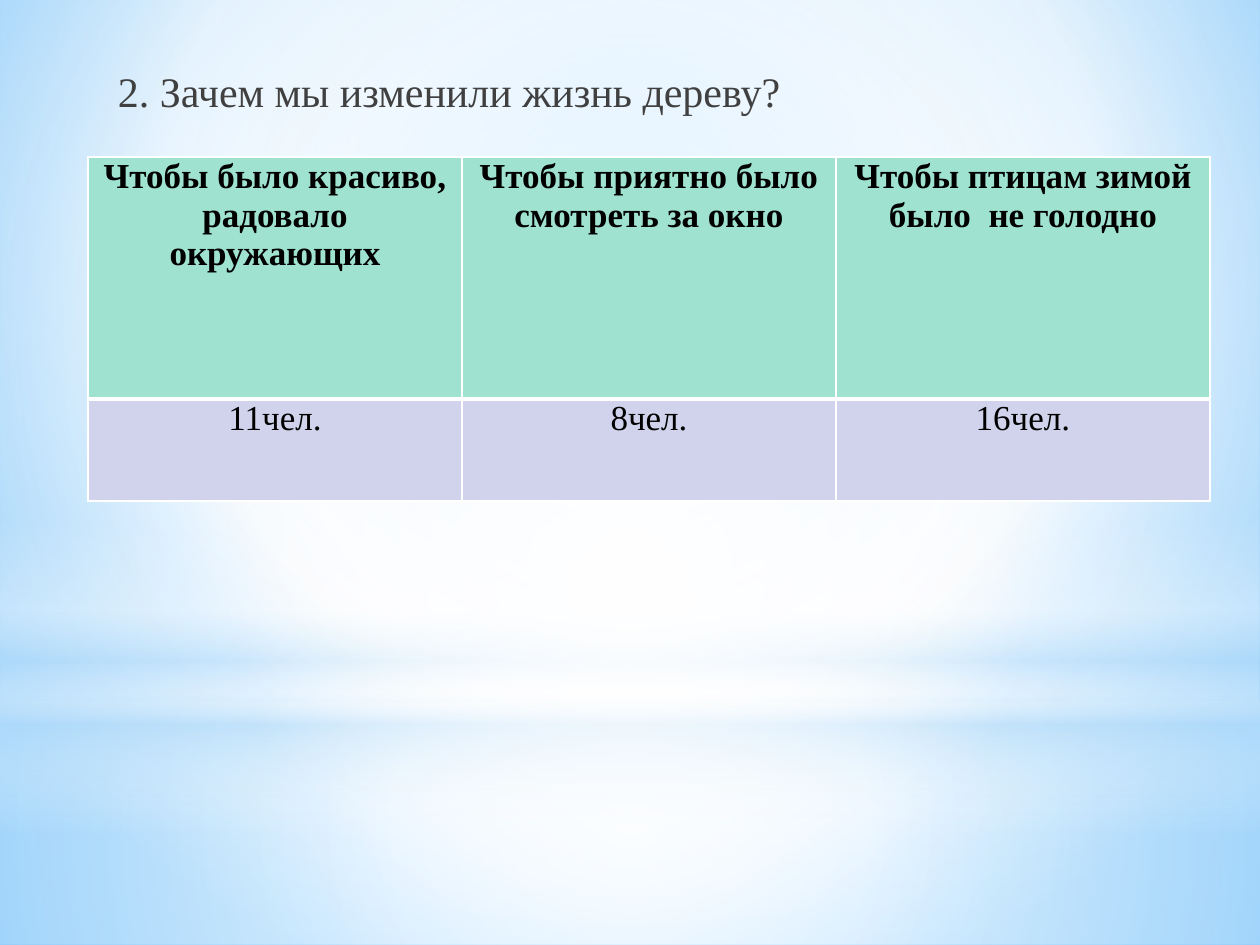
import pptx
import pptx.util
import pptx.dml.color
import pptx.enum.shapes
import pptx.enum.text
import pptx.oxml
import pptx.oxml.ns

PX = 914400 // 126
FONT = "Times New Roman"
COLORS = {
    "white": "FFFFFF",
    "haze": "B4DCFA",
    "sky": "9ED5FF",
    "deep_sky": "5BB9FF",
    "mint": "9EE2CF",
    "lavender": "D0D3EB",
    "black": "000000",
    "gray": "404040",
}
ANSWERS = [
    ["Чтобы было красиво, радовало окружающих",
     "Чтобы приятно было смотреть за окно",
     "Чтобы птицам зимой было  не голодно"],
    ["11чел.", "8чел.", "16чел."],
]
ROW_HEIGHTS = [242, 102]
COL_WIDTH = 374


def px(*lengths):
    return [pptx.util.Emu(n * PX) for n in lengths]


def rgb(name):
    return pptx.dml.color.RGBColor.from_string(COLORS[name])


def set_gradient(parent, stops, center=None):
    gs = "".join(
        f'<a:gs pos="{pos * 1000}"><a:srgbClr val="{COLORS[color]}">'
        f'<a:alpha val="{alpha * 1000}"/></a:srgbClr></a:gs>'
        for pos, color, alpha in stops)
    if center:
        sides = " ".join(f'{k}="{v * 1000}"' for k, v in zip("ltrb", center))
        shade = f'<a:path path="circle"><a:fillToRect {sides}/></a:path>'
    else:
        shade = '<a:lin ang="5400000" scaled="0"/>'
    grad = pptx.oxml.parse_xml(
        f'<a:gradFill {pptx.oxml.ns.nsdecls("a")} rotWithShape="1">'
        f'<a:gsLst>{gs}</a:gsLst>{shade}</a:gradFill>')
    solid = parent.find(pptx.oxml.ns.qn("a:solidFill"))
    parent.replace(solid, grad)


def set_background(slide):
    slide.background.fill.solid()
    bg = slide.element.find(".//" + pptx.oxml.ns.qn("p:bgPr"))
    set_gradient(bg, [(0, "sky", 100), (60, "white", 100), (100, "deep_sky", 100)],
                 (20, 10, 20, 60))


def add_glow(slide, kind, top, height, stops, center=None):
    sp = slide.shapes.add_shape(kind, *px(0, top, 1260, height))
    sp.shadow.inherit = False
    sp.line.fill.background()
    sp.fill.solid()
    set_gradient(sp.element.spPr, stops, center)


def format_run(r, size, color, bold=False):
    r.font.name = FONT
    r.font.size = pptx.util.Pt(size)
    r.font.bold = bold
    r.font.color.rgb = rgb(color)


def add_question(slide, text):
    sp = slide.shapes.add_textbox(*px(63, 59, 911, 79))
    tf = sp.text_frame
    tf.word_wrap = True
    tf.margin_left = px(55)[0]
    tf.text = text
    p = tf.paragraphs[0]
    p.space_before = pptx.util.Pt(4.8)
    p.space_after = pptx.util.Pt(3)
    format_run(p.runs[0], 24, "gray")


def set_borders(cell, widths):
    tc_pr = cell._tc.get_or_add_tcPr()
    for i, (side, width) in enumerate(zip("LRTB", widths)):
        ln = pptx.oxml.parse_xml(
            f'<a:ln{side} {pptx.oxml.ns.nsdecls("a")} w="{width * 12700}">'
            f'<a:solidFill><a:srgbClr val="{COLORS["white"]}"/></a:solidFill></a:ln{side}>')
        tc_pr.insert(i, ln)


def format_cell(cell, text, header):
    cell.text = text
    cell.margin_left = cell.margin_right = px(9)[0]
    cell.margin_top = cell.margin_bottom = 0
    cell.fill.solid()
    cell.fill.fore_color.rgb = rgb("mint" if header else "lavender")
    set_borders(cell, (1, 1, 1, 3) if header else (1, 1, 3, 1))
    p = cell.text_frame.paragraphs[0]
    p.alignment = pptx.enum.text.PP_ALIGN.CENTER
    format_run(p.runs[0], 20, "black", header)


def add_answers(slide):
    cols = len(ANSWERS[0])
    frame = slide.shapes.add_table(
        len(ANSWERS), cols, *px(88, 157, cols * COL_WIDTH, sum(ROW_HEIGHTS)))
    table = frame.table
    for col in table.columns:
        col.width = px(COL_WIDTH)[0]
    for i, (texts, height) in enumerate(zip(ANSWERS, ROW_HEIGHTS)):
        table.rows[i].height = px(height)[0]
        for j, text in enumerate(texts):
            format_cell(table.cell(i, j), text, i == 0)


def main():
    prs = pptx.Presentation()
    prs.slide_width, prs.slide_height = px(1260, 945)
    slide = prs.slides.add_slide(prs.slide_layouts[6])
    rect = pptx.enum.shapes.MSO_SHAPE.RECTANGLE
    oval = pptx.enum.shapes.MSO_SHAPE.OVAL
    middle = (50, 50, 50, 50)
    set_background(slide)
    add_glow(slide, rect, 703, 242,
             [(0, "white", 91), (37, "white", 76), (100, "haze", 79)], middle)
    add_glow(slide, rect, 0, 703,
             [(0, "white", 89), (48, "white", 62), (100, "haze", 79)], middle)
    add_glow(slide, rect, 519, 315,
             [(0, "white", 0), (29, "white", 30), (45, "haze", 40),
              (55, "white", 26), (65, "haze", 60), (100, "white", 0)])
    add_glow(slide, oval, 221, 703, [(0, "white", 100), (56, "white", 0)], middle)
    add_answers(slide)
    add_question(slide, "2. Зачем мы изменили жизнь дереву?")
    prs.save("out.pptx")


if __name__ == "__main__":
    main()
